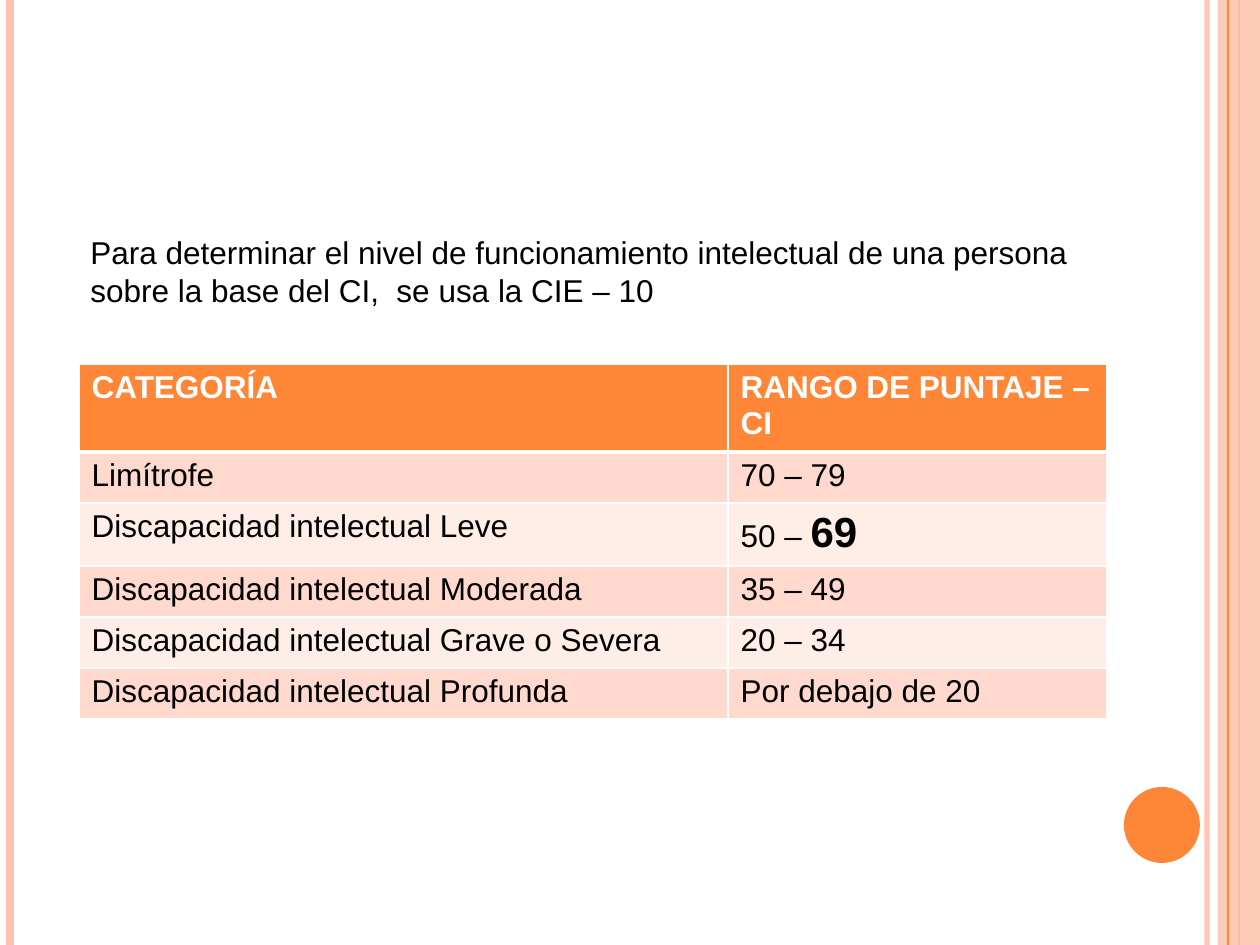
from lxml import etree
from pptx import Presentation
from pptx.dml.color import RGBColor
from pptx.enum.shapes import MSO_CONNECTOR, MSO_SHAPE
from pptx.enum.text import MSO_AUTO_SIZE
from pptx.oxml.ns import qn
from pptx.util import Pt

LINE = MSO_CONNECTOR.STRAIGHT
RECT = MSO_SHAPE.RECTANGLE
OVAL = MSO_SHAPE.OVAL
GROW = MSO_AUTO_SIZE.SHAPE_TO_FIT_TEXT

WIDE, HIGH = 1260, 945
FONT = "Arial"
WHITE, BLACK = "FFFFFF", "000000"
ORANGE, PEACH = "FE8637", "FEC3AE"
BANDS = ["FFEDE8", "FFD9CE"]

INTRO = ("Para determinar el nivel de funcionamiento intelectual de una persona "
         "sobre la base del CI,  se usa la CIE – 10")
ROWS = [
    (88, "CATEGORÍA", ["RANGO DE PUNTAJE – CI"]),
    (51, "Limítrofe", ["70 – 79"]),
    (63, "Discapacidad intelectual Leve", ["50 – ", "69"]),
    (51, "Discapacidad intelectual Moderada", ["35 – 49"]),
    (51, "Discapacidad intelectual Grave o Severa", ["20 – 34"]),
    (51, "Discapacidad intelectual Profunda", ["Por debajo de 20"]),
]
COLS = [649, 379]
BACK = [(1207, PEACH, 3, 93), (10, PEACH, 4.5, 100), (1239, ORANGE, 1.5, 100)]
FRONT = [(1228, ORANGE, 0.75, 100)]


def px(n):
    return round(n * 914400 / 126)


def rgb(code):
    return RGBColor.from_string(code)


def fade(fill, pct):
    if pct < 100:
        tint = fill._xPr.find(".//" + qn("a:srgbClr"))
        etree.SubElement(tint, qn("a:alpha"), val=str(pct * 1000))


def add_bars(bars):
    for x, color, width, pct in bars:
        bar = slide.shapes.add_connector(LINE, px(x), 0, px(x), px(HIGH))
        bar.line.color.rgb = rgb(color)
        bar.line.width = Pt(width)
        fade(bar.line.fill, pct)
        etree.SubElement(bar._element.spPr, qn("a:effectLst"))


def add_block(kind, box, color, pct=100):
    block = slide.shapes.add_shape(kind, *map(px, box))
    block.shadow.inherit = False
    block.fill.solid()
    block.fill.fore_color.rgb = rgb(color)
    block.line.fill.background()
    fade(block.fill, pct)


def style(run, color=BLACK, bold=False, size=18):
    run.font.name = FONT
    run.font.size = Pt(size)
    run.font.bold = bold
    run.font.color.rgb = rgb(color)


def add_edge(cell, side, width):
    edge = etree.SubElement(cell._tc.get_or_add_tcPr(), qn("a:" + side),
                            w=str(Pt(width)))
    fill = etree.SubElement(edge, qn("a:solidFill"))
    etree.SubElement(fill, qn("a:srgbClr"), val=WHITE)


def fill_cell(cell, parts, row):
    head = row == 0
    for side in ("lnL", "lnR", "lnT", "lnB"):
        thick = (row, side) in [(0, "lnB"), (1, "lnT")]
        add_edge(cell, side, 3 if thick else 1)
    cell.fill.solid()
    cell.fill.fore_color.rgb = rgb(ORANGE if head else BANDS[row % 2])
    para = cell.text_frame.paragraphs[0]
    for i, part in enumerate(parts):
        run = para.add_run()
        run.text = part
        style(run, WHITE if head else BLACK, head or i > 0, 24 if i else 18)


deck = Presentation()
deck.slide_width, deck.slide_height = px(WIDE), px(HIGH)
slide = deck.slides.add_slide(deck.slide_layouts[6])

add_bars(BACK)
add_block(RECT, (1218, 0, 42, HIGH), PEACH, 87)
add_bars(FRONT)
add_block(OVAL, (1124, 787, 76, 76), ORANGE)

high = sum(row[0] for row in ROWS)
table = slide.shapes.add_table(len(ROWS), len(COLS), px(79), px(364),
                               px(sum(COLS)), px(high)).table
for col, width in zip(table.columns, COLS):
    col.width = px(width)
for r, (tall, name, score) in enumerate(ROWS):
    table.rows[r].height = px(tall)
    fill_cell(table.cell(r, 0), [name], r)
    fill_cell(table.cell(r, 1), score, r)

intro = slide.shapes.add_textbox(px(78), px(227), px(1023), px(89)).text_frame
intro.word_wrap = True
intro.auto_size = GROW
intro.text = INTRO
style(intro.paragraphs[0].runs[0])

deck.save("out.pptx")
